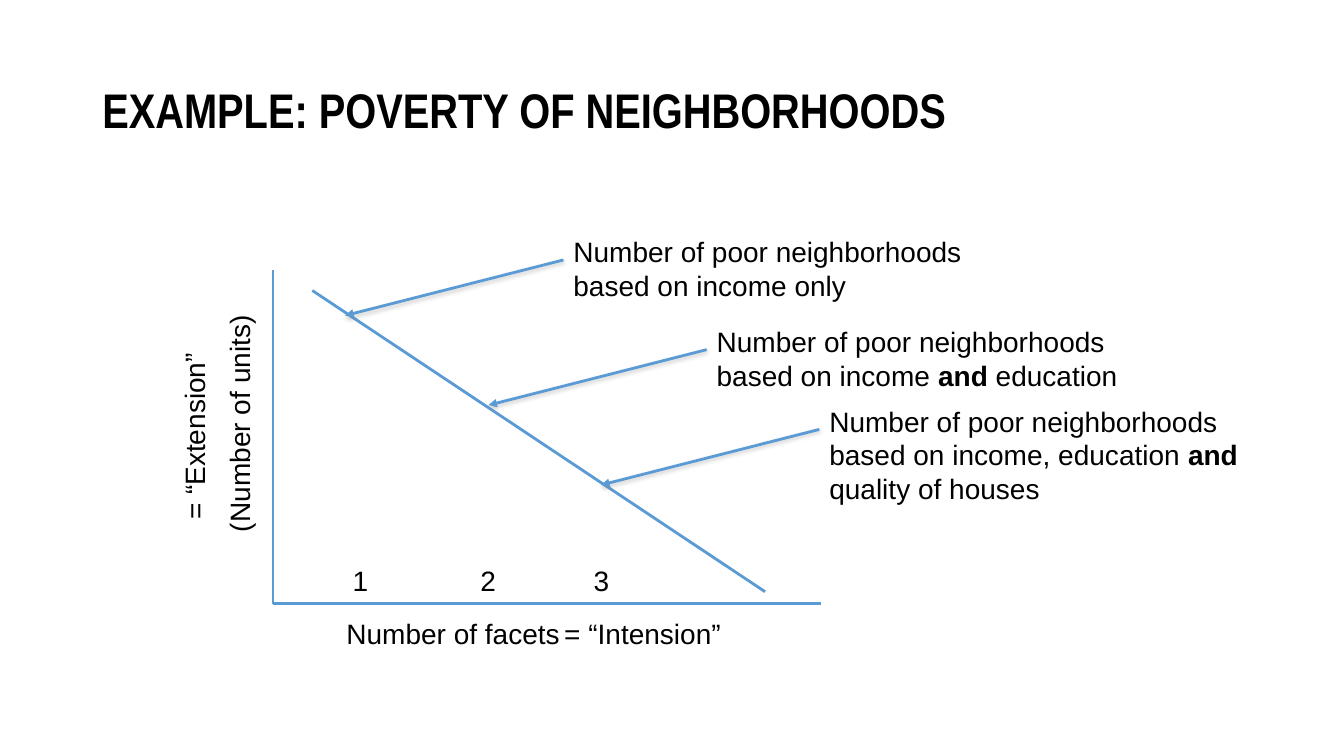
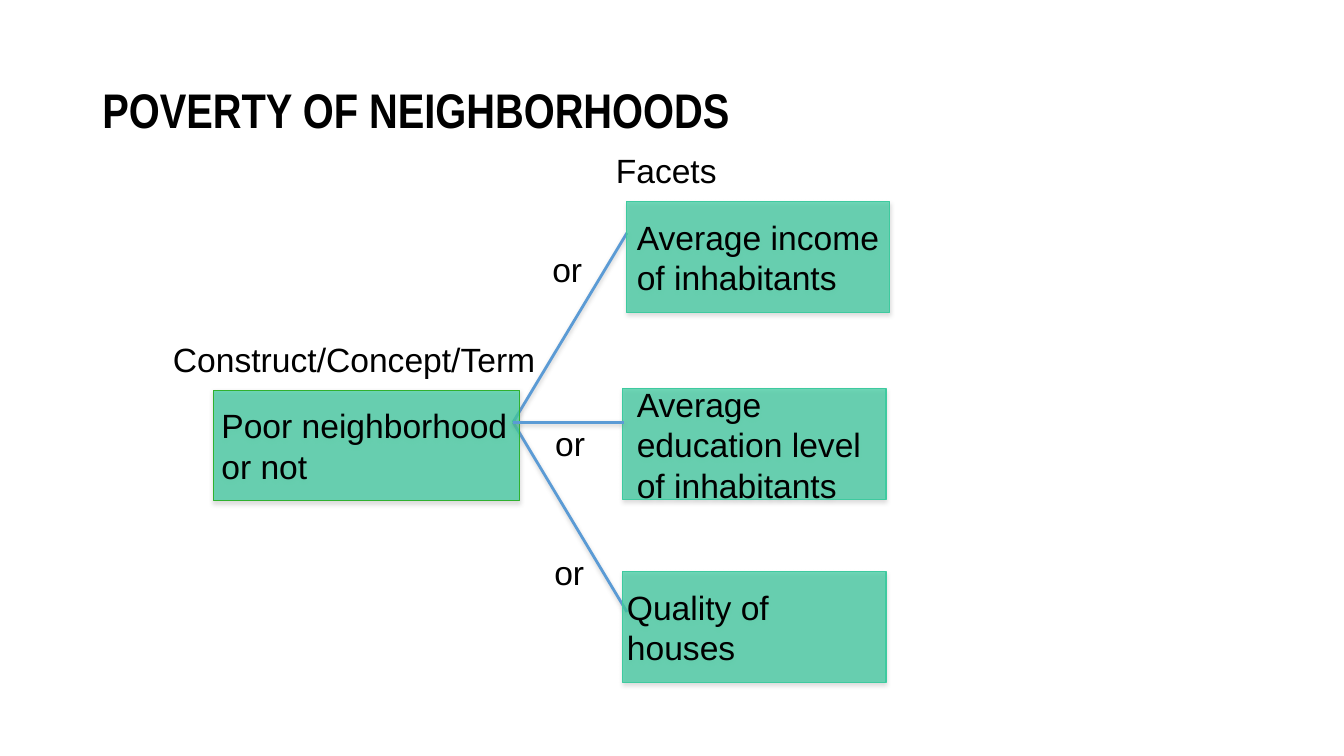
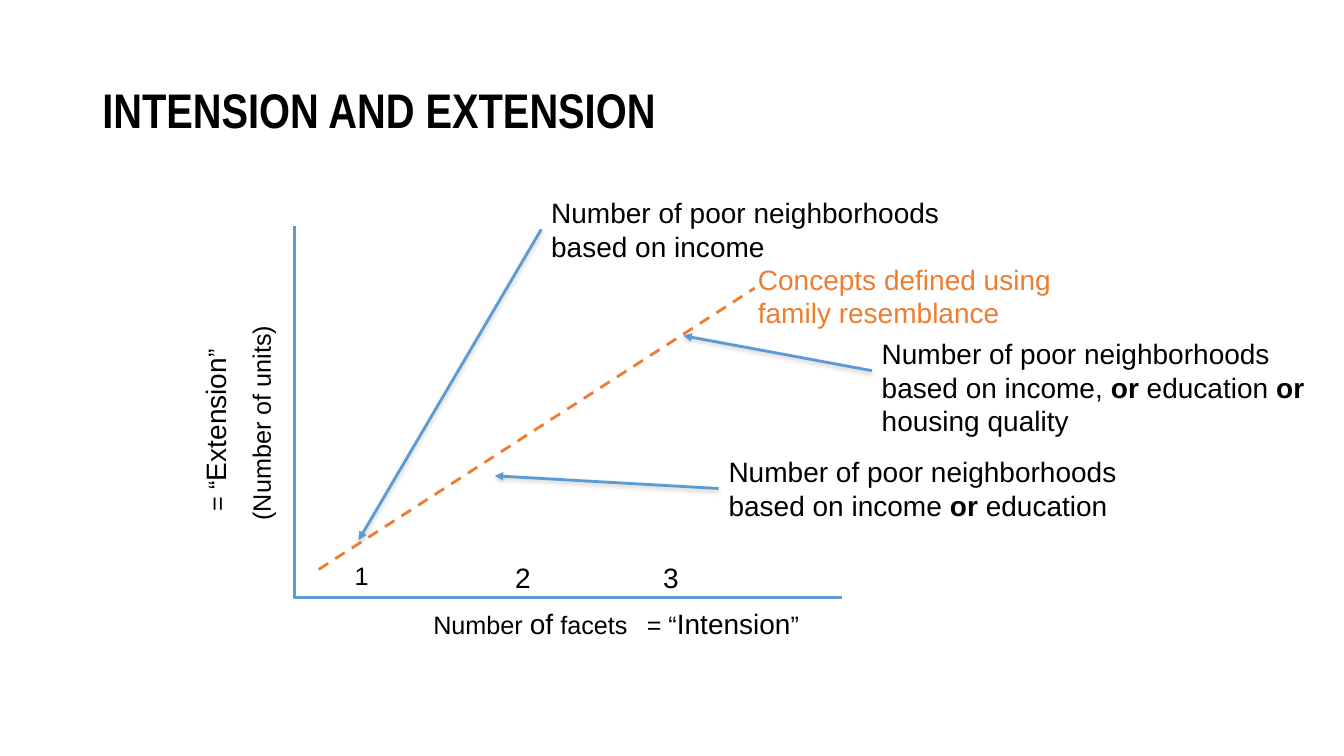
from lxml.etree import SubElement
from pptx import Presentation
from pptx.dml.color import RGBColor
from pptx.enum.dml import MSO_LINE
from pptx.enum.shapes import MSO_CONNECTOR, MSO_SHAPE
from pptx.enum.text import MSO_ANCHOR, PP_ALIGN
from pptx.oxml.ns import qn
from pptx.util import Cm, Pt

COLORS = {
    "paper": "FFFFFF", "ink": "000000", "line": "5B9BD5", "trend": "ED7D31",
    "box": "3ECA9F", "edge": "30B12F", "shade": "808080",
}
POOR = "Number of poor neighborhoods"


def color(name):
    return RGBColor.from_string(COLORS[name])


def shade(item, alpha=38, dist=20000):
    """Give the item a soft drop shadow, or none when alpha is 0."""
    effects = SubElement(item.element.spPr, qn("a:effectLst"))
    if alpha:
        outer = SubElement(effects, qn("a:outerShdw"), blurRad="40000",
                           dist=str(dist), dir="5400000", rotWithShape="0")
        tint = SubElement(outer, qn("a:srgbClr"), val=COLORS["shade"])
        SubElement(tint, qn("a:alpha"), val=str(alpha * 1000))


def fill_text(frame, lines, size=20, ink="ink", big=None, font="Arial"):
    """Write lines; parts between asterisks are bold, or of size big if given."""
    for i, line in enumerate(lines):
        para = frame.paragraphs[0] if i == 0 else frame.add_paragraph()
        para.alignment = PP_ALIGN.LEFT
        para.font.name = font
        para.font.size = Pt(size)
        para.font.color.rgb = color(ink)
        for j, part in enumerate(line.split("*")):
            if not part:
                continue
            run = para.add_run()
            run.text = part
            if j % 2 and big:
                run.font.size = Pt(big)
            elif j % 2:
                run.font.bold = True


def add_text(slide, at, lines, wrap=False, turn=0, **style):
    box = slide.shapes.add_textbox(*map(Cm, at))
    box.rotation = turn
    box.text_frame.word_wrap = wrap
    fill_text(box.text_frame, lines, **style)
    return box


def add_line(slide, start, end, ink="line", dash=False, arrow=False, soft=False):
    line = slide.shapes.add_connector(
        MSO_CONNECTOR.STRAIGHT, *map(Cm, (*start, *end)))
    line.line.color.rgb = color(ink)
    line.line.width = Pt(2)
    if dash:
        line.line.dash_style = MSO_LINE.DASH
    if arrow:
        SubElement(line.get_or_add_ln(), qn("a:tailEnd"), type="triangle")
    shade(line, 38 if soft else 0)
    return line


def add_page(deck, title):
    slide = deck.slides.add_slide(deck.slide_layouts[6])
    slide.background.fill.solid()
    slide.background.fill.fore_color.rgb = color("paper")
    box = add_text(slide, (2.33, 1.01, 29.21, 3.68), [title], wrap=True,
                   size=34.7, font="Arial Narrow")
    box.text_frame.vertical_anchor = MSO_ANCHOR.MIDDLE
    para = box.text_frame.paragraphs[0]
    para.font.bold = True
    para.line_spacing = 0.9
    return slide


def add_axes(slide, left, top, right, base):
    add_line(slide, (left, top), (left, base))
    add_line(slide, (right, base), (left, base))


def add_note(slide, left, top, width, lines, tip, drop=None):
    """Add a note with an arrow to tip, from its left side or drop below its top."""
    box = add_text(slide, (left, top, width, 0.24 + 0.86 * len(lines)), lines,
                   wrap=True)
    arrow = add_line(slide, (left, top + (drop or 0)), tip, arrow=True, soft=True)
    if drop is None:
        arrow.begin_connect(box, 1)


def add_box(slide, left, top, width, inset, text, edge="box"):
    box = slide.shapes.add_shape(
        MSO_SHAPE.RECTANGLE, *map(Cm, (left, top, width, 2.79)))
    box.fill.solid()
    box.fill.fore_color.rgb = color("box")
    tint = box.element.spPr.find(qn("a:solidFill"))[0]
    SubElement(tint, qn("a:alpha"), val="74000")
    box.line.color.rgb = color(edge)
    box.line.width = Pt(0.75)
    shade(box, 35, 23000)
    frame = box.text_frame
    frame.word_wrap = True
    frame.vertical_anchor = MSO_ANCHOR.MIDDLE
    frame.margin_left = Cm(inset)
    frame.margin_right = frame.margin_top = frame.margin_bottom = 0
    fill_text(frame, [text], size=24)


def example(deck):
    slide = add_page(deck, "EXAMPLE: POVERTY OF NEIGHBORHOODS")
    add_axes(slide, 6.88, 6.81, 20.68, 15.21)
    add_line(slide, (7.87, 7.32), (19.28, 14.91))
    add_text(slide, (8.48, 15.42, 5.92, 1.12), ["Number of facets"])
    add_text(slide, (13.97, 15.42, 4.5, 1.12), ["= “Intension”"])
    add_text(slide, (3.05, 10.11, 5.97, 1.12), ["(Number of units)"], turn=270)
    add_text(slide, (2.54, 10.41, 4.72, 1.12), ["= “Extension”"], turn=270)
    for tick, left in zip("123", (8.64, 11.86, 14.71)):
        add_text(slide, (left, 14.07, 0.91, 1.12), [tick])
    notes = [
        (14.2, 5.79, 12.83, ["based on income only"]),
        (17.81, 8.05, 10.74, ["based on income *and* education"]),
        (20.65, 10.06, 11.58,
         ["based on income, education *and* quality of houses"]),
    ]
    for left, top, width, lines in notes:
        rows = [POOR, *lines]
        add_note(slide, left, top, width, rows, (left - 5.5, top + 2.16), 0.76)


def poverty(deck):
    slide = add_page(deck, "POVERTY OF NEIGHBORHOODS")
    hub = (12.93, 10.64)
    for end in ((15.8, 15.42), (15.8, 5.87)):
        add_line(slide, end, hub, soft=True)
    add_box(slide, 5.38, 9.83, 7.72, 0.2, "Poor neighborhood or not", "edge")
    add_box(slide, 15.8, 5.08, 6.63, 0.25, "Average income of inhabitants")
    add_box(slide, 15.7, 9.8, 6.63, 0.35, "Average education level of inhabitants")
    add_box(slide, 15.7, 14.4, 6.63, 0.1, "Quality of houses")
    add_line(slide, (15.72, 10.64), hub, soft=True)
    labels = [
        (4.11, 8.41, 9.73, "Construct/Concept/Term"),
        (15.27, 3.66, 3.07, "Facets"),
        (13.67, 6.15, 1.27, "or"),
        (13.74, 10.52, 1.27, "or"),
        (13.72, 13.79, 1.27, "or"),
    ]
    for left, top, width, text in labels:
        add_text(slide, (left, top, width, 1.27), [text], size=24)


def family(deck):
    slide = add_page(deck, "INTENSION AND EXTENSION")
    add_axes(slide, 7.42, 5.69, 21.21, 15.06)
    mixed = {"size": 18, "big": 20}
    add_text(slide, (10.67, 15.16, 5.46, 1.12), ["Number *of* facets"], **mixed)
    add_text(slide, (16.05, 15.16, 4.39, 1.12), ["= “*Intension*”"], **mixed)
    add_text(slide, (3.73, 10.01, 5.69, 1.02), ["(Number of units)"],
             turn=270, size=18)
    add_text(slide, (3.12, 10.26, 4.62, 1.12), ["= “*Extension*”"],
             turn=270, **mixed)
    for tick, left, size in (("1", 8.69, 18), ("2", 12.73, 20), ("3", 16.46, 20)):
        add_text(slide, (left, 14, 0.91, 1.12), [tick], size=size)
    add_line(slide, (8.03, 14.35), (19.02, 7.26), ink="trend", dash=True)
    add_text(slide, (18.85, 6.48, 9.78, 1.96),
             ["Concepts defined using", "family resemblance"],
             wrap=True, ink="trend")
    add_note(slide, 21.97, 8.36, 11.66,
             [POOR, "based on income, *or* education *or* housing quality"],
             (17.22, 8.46))
    add_note(slide, 13.64, 4.8, 10.69, [POOR, "based on income"], (9.04, 13.61))
    add_note(slide, 18.11, 11.33, 10.52,
             [POOR, "based on income *or* education"], (12.47, 11.99))


def main():
    deck = Presentation()
    deck.slide_width, deck.slide_height = Cm(33.87), Cm(19.05)
    example(deck)
    poverty(deck)
    family(deck)
    deck.save("out.pptx")


if __name__ == "__main__":
    main()
